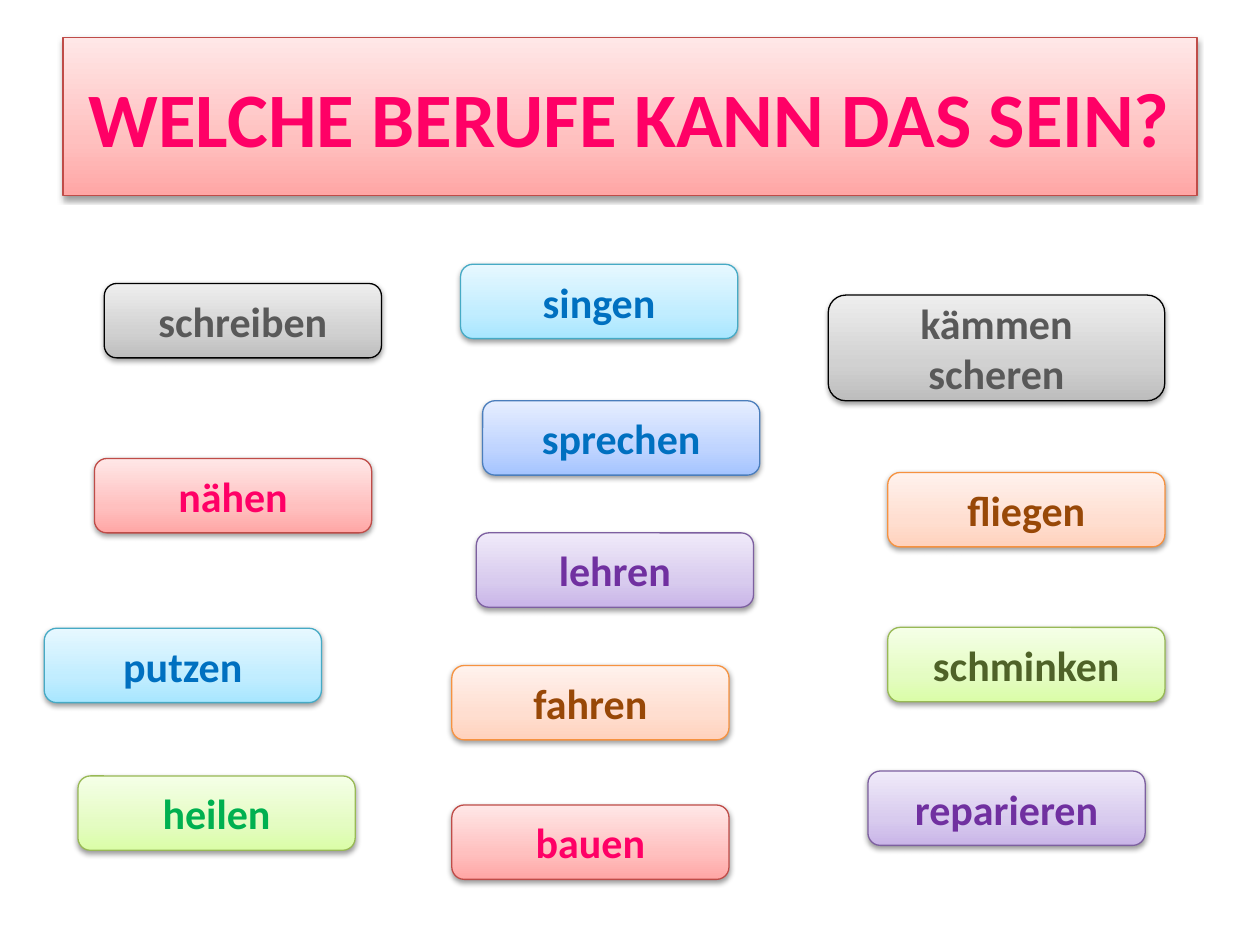
from copy import deepcopy

from lxml.etree import SubElement
from pptx import Presentation
from pptx.dml.color import RGBColor
from pptx.enum.shapes import MSO_SHAPE
from pptx.enum.text import MSO_ANCHOR, PP_ALIGN
from pptx.oxml.ns import qn
from pptx.util import Pt

FONT = "Calibri"

# Box styles: gradient from bottom to top, then outline
STYLES = {
    "red": (("FFA6A5", "FFC0BF", "FFE7E7"), "BF4C48"),
    "grey": (("BDBDBD", "D1D1D1", "EEEEEE"), "000000"),
    "blue": (("A4C4FF", "BFD4FF", "E6EEFF"), "4B7EBC"),
    "aqua": (("A7E6FF", "C1EDFF", "E7F8FF"), "46AAC5"),
    "green": (("DAFDA7", "E4FCC2", "F5FFE7"), "98B955"),
    "purple": (("C9B5E8", "D8CBEE", "F0EAF9"), "7D60A0"),
    "orange": (("FFD2BD", "FFDED0", "FFF2ED"), "F69240"),
}
STOPS = (0, 0.35, 1)

TEXT = {
    "pink": "FF0066",
    "grey": "595959",
    "blue": "0070C0",
    "green": "00B050",
    "olive": "4F6228",
    "purple": "7030A0",
    "brown": "984807",
}

CARD_W, CARD_H = 158.4, 42.5

# Words, left, top, box style, text colour
CARDS = [
    # left column
    ("schreiben", 59.6, 162, "grey", "grey"),
    ("nähen", 54, 262, "red", "pink"),
    ("putzen", 25.3, 359, "aqua", "blue"),
    ("heilen", 44.6, 443.4, "green", "green"),
    # middle column
    ("singen", 263.2, 151, "aqua", "blue"),
    ("sprechen", 275.8, 229, "blue", "blue"),
    ("lehren", 272.2, 304.5, "purple", "purple"),
    ("fahren", 258.2, 380.3, "orange", "brown"),
    ("bauen", 258.2, 460, "red", "pink"),
    # right column
    ("fliegen", 507.3, 270, "orange", "brown"),
    ("schminken", 507.3, 358.5, "green", "olive"),
    ("reparieren", 496, 440.6, "purple", "purple"),
]


def set_gradient(sp, colors):
    fill = sp.fill
    fill.gradient()
    fill.gradient_angle = 90
    stop_list = sp._element.spPr.find(qn("a:gradFill")).find(qn("a:gsLst"))
    stop_list.append(deepcopy(stop_list[0]))
    for stop, position, color in zip(fill.gradient_stops, STOPS, colors):
        stop.position = position
        stop.color.rgb = RGBColor.from_string(color)


def set_shadow(sp):
    sp.shadow.inherit = False
    effects = sp._element.spPr.find(qn("a:effectLst"))
    shadow = SubElement(effects, qn("a:outerShdw"), blurRad=str(Pt(3.15)),
                        dist=str(Pt(1.57)), dir="5400000", rotWithShape="0")
    color = SubElement(shadow, qn("a:srgbClr"), val="000000")
    SubElement(color, qn("a:alpha"), val="38000")


def add_box(s, kind, box, lines, style, color, size):
    sp = s.shapes.add_shape(kind, *(Pt(v) for v in box))
    colors, outline = STYLES[style]
    set_gradient(sp, colors)
    sp.line.color.rgb = RGBColor.from_string(outline)
    sp.line.width = Pt(0.75)
    set_shadow(sp)
    tf = sp.text_frame
    tf.word_wrap = True
    tf.vertical_anchor = MSO_ANCHOR.MIDDLE
    for i, line in enumerate(lines):
        p = tf.add_paragraph() if i else tf.paragraphs[0]
        p.alignment = PP_ALIGN.CENTER
        r = p.add_run()
        r.text = line
        r.font.name = FONT
        r.font.size = Pt(size)
        r.font.bold = True
        r.font.color.rgb = RGBColor.from_string(TEXT[color])


def add_title(s, box):
    add_box(s, MSO_SHAPE.RECTANGLE, box, ["WELCHE BERUFE KANN DAS SEIN?"],
            "red", "pink", 44)


def add_card(s, box, lines, style, color):
    add_box(s, MSO_SHAPE.ROUNDED_RECTANGLE, box, lines, style, color, 24)


def main():
    prs = Presentation()
    prs.slide_width, prs.slide_height = Pt(720), Pt(540)
    s = prs.slides.add_slide(prs.slide_layouts[6])

    add_title(s, (36, 21.6, 648, 90))
    for word, left, top, style, color in CARDS:
        add_card(s, (left, top, CARD_W, CARD_H), [word], style, color)
    # Larger card with two verbs
    add_card(s, (473.3, 168.6, 192.3, 60.4), ["kämmen", "scheren"],
             "grey", "grey")

    prs.save("out.pptx")


if __name__ == "__main__":
    main()
